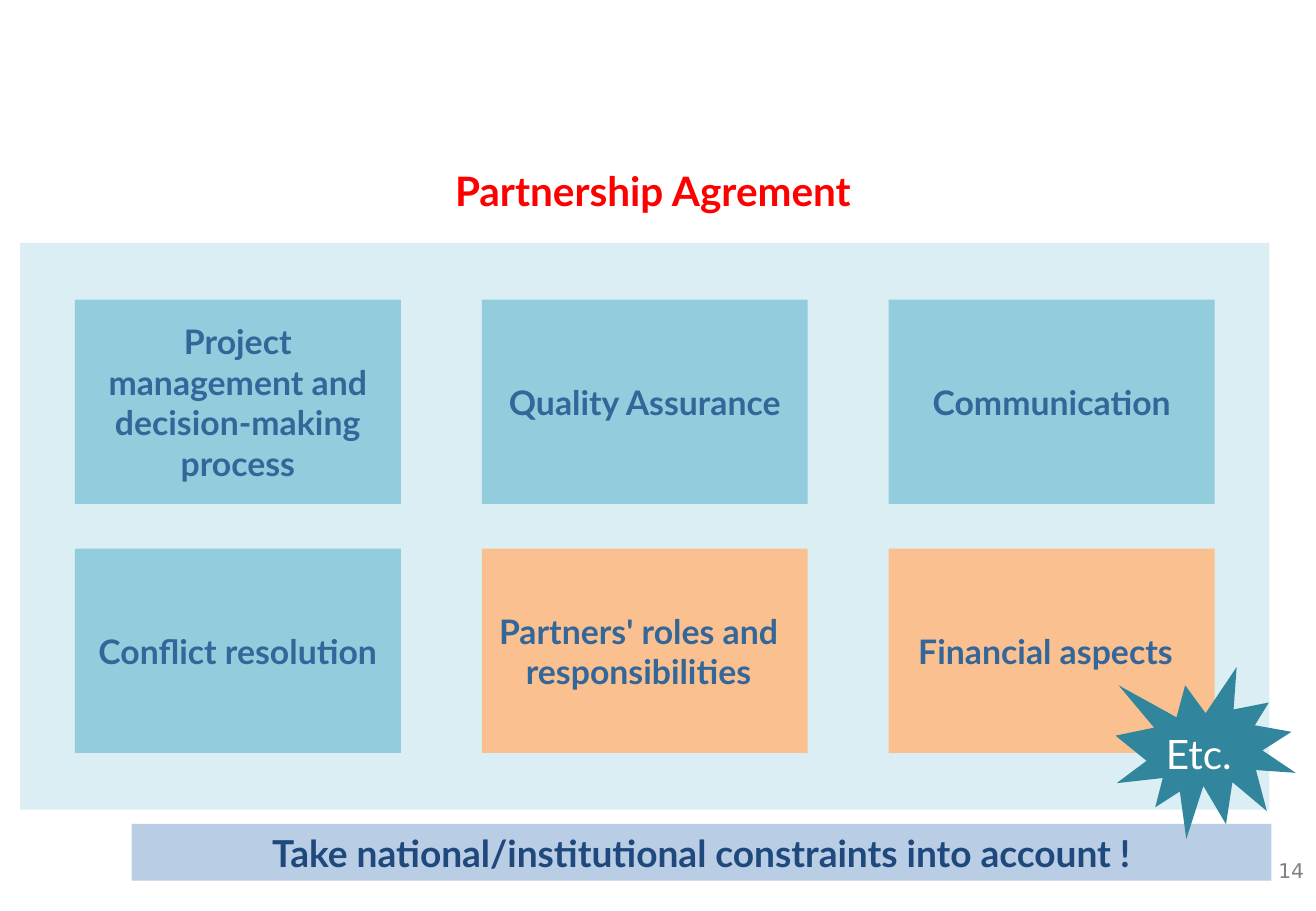
from pptx import Presentation
from pptx.dml.color import RGBColor
from pptx.enum.shapes import MSO_SHAPE as Shape
from pptx.enum.text import MSO_ANCHOR as Anchor, PP_ALIGN as Align
from pptx.util import Emu, Pt

EMU_PER_PX = 7620
BLUE, ORANGE = "93CDDD", "FAC090"
CARD_LEFT, CARD_TOP, CARD_WIDTH, CARD_HEIGHT = 74, 296, 322, 202
COLUMN_STEP, ROW_STEP = 402, 246
CARD_ROWS = [
    [("Project management and decision-making process", BLUE, 12),
     ("Quality Assurance", BLUE, 12),
     ("Communication", BLUE, 12)],
    [("Conflict resolution", BLUE, 12),
     ("Partners' roles and responsibilities", ORANGE, 24),
     ("Financial aspects", ORANGE, 24)],
]


def px(length):
    """Turn pixels into EMU."""
    return Emu(length * EMU_PER_PX)


def color(hex_value):
    """Turn a hex string into a colour."""
    return RGBColor.from_string(hex_value)


def set_text(shape, text, size=20, font="Lato", fill="336699", bold=True,
             align=Align.CENTER, anchor=Anchor.MIDDLE, right_inset=12):
    """Write one formatted paragraph into a shape."""
    frame = shape.text_frame
    frame.word_wrap = True
    frame.vertical_anchor = anchor
    frame.margin_left, frame.margin_right = px(12), px(right_inset)
    frame.margin_top = frame.margin_bottom = px(6)
    paragraph = frame.paragraphs[0]
    paragraph.text = text
    paragraph.alignment = align
    paragraph.font.size = Pt(size)
    paragraph.font.name = font
    paragraph.font.bold = bold
    paragraph.font.color.rgb = color(fill)


def add_block(slide, kind, left, top, width, height, fill):
    """Add a flat filled shape without outline."""
    shape = slide.shapes.add_shape(kind, px(left), px(top), px(width), px(height))
    shape.shadow.inherit = False
    shape.fill.solid()
    shape.fill.fore_color.rgb = color(fill)
    shape.line.fill.background()
    return shape


def add_label(slide, left, top, width, height, text, **text_format):
    """Add a text box with one formatted paragraph."""
    shape = slide.shapes.add_textbox(px(left), px(top), px(width), px(height))
    set_text(shape, text, **text_format)


def add_cards(slide):
    """Add the grid of agreement topics."""
    for row, cards in enumerate(CARD_ROWS):
        for column, (text, fill, right_inset) in enumerate(cards):
            card = add_block(slide, Shape.RECTANGLE,
                             CARD_LEFT + column * COLUMN_STEP,
                             CARD_TOP + row * ROW_STEP,
                             CARD_WIDTH, CARD_HEIGHT, fill)
            set_text(card, text, right_inset=right_inset)


def main():
    """Build and save the partnership agreement slide."""
    presentation = Presentation()
    presentation.slide_width, presentation.slide_height = px(1300), px(900)
    slide = presentation.slides.add_slide(presentation.slide_layouts[6])
    add_block(slide, Shape.RECTANGLE, 20, 240, 1234, 560, "DBEEF4")
    add_label(slide, 997, 842, 303, 62, "14", size=12, font="DejaVu Sans",
              fill="808080", bold=False, align=Align.RIGHT, anchor=Anchor.TOP)
    add_label(slide, 0, 144, 1290, 88, "Partnership Agrement", size=24, fill="FF0000")
    add_cards(slide)
    banner = add_block(slide, Shape.RECTANGLE, 130, 814, 1126, 56, "B9CDE5")
    set_text(banner, "Take national/institutional constraints into account !",
             size=22, fill="1F497D")
    add_block(slide, Shape.EXPLOSION1, 1102, 659, 178, 170, "31859C")
    add_label(slide, 1140, 714, 121, 61, "Etc.", size=24, fill="FFFFFF",
              bold=False, align=Align.LEFT)
    presentation.save("out.pptx")


if __name__ == "__main__":
    main()
